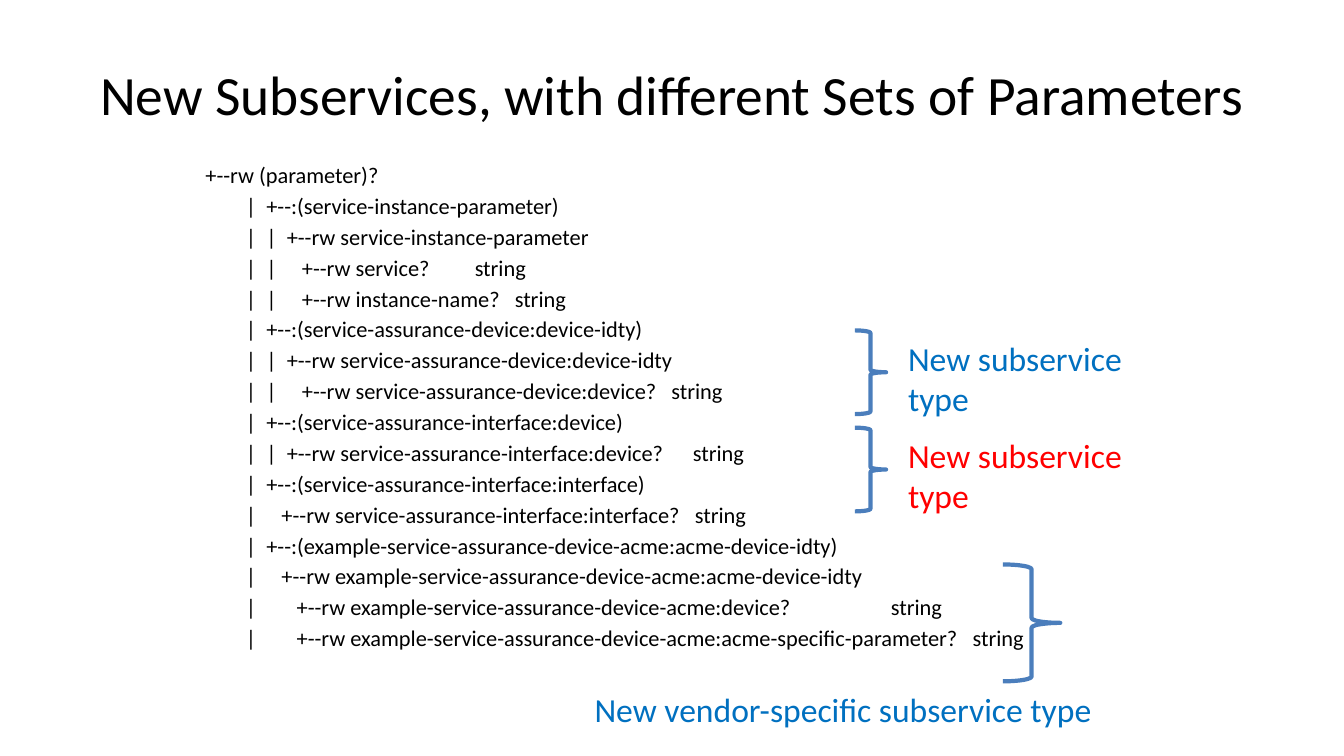
import pptx
import pptx.util
import pptx.dml.color
import pptx.enum.shapes
import pptx.enum.text
import lxml.etree
from pptx.oxml.ns import qn

Pt = pptx.util.Pt
BLACK = pptx.dml.color.RGBColor(0x00, 0x00, 0x00)
BLUE = pptx.dml.color.RGBColor(0x00, 0x70, 0xC0)
RED = pptx.dml.color.RGBColor(0xFF, 0x00, 0x00)
BRACE_BLUE = pptx.dml.color.RGBColor(0x4B, 0x7E, 0xBC)

ROOT = ()
CASE = (28.9, 43.5)
SINGLE_CHILD = (28.9, 54.3)
SINGLE_LEAF = (28.9, 65.2)
CHILD = (28.9, 43.5, 58.1)
LEAF = (28.9, 43.5, 68.9)

TREE = [
    (ROOT, "+--rw (parameter)?", None),
    (CASE, "+--:(service-instance-parameter)", None),
    (CHILD, "+--rw service-instance-parameter", None),
    (LEAF, "+--rw service?", 192.4),
    (LEAF, "+--rw instance-name?", 221),
    (CASE, "+--:(service-assurance-device:device-idty)", None),
    (CHILD, "+--rw service-assurance-device:device-idty", None),
    (LEAF, "+--rw service-assurance-device:device?", 332.8),
    (CASE, "+--:(service-assurance-interface:device)", None),
    (CHILD, "+--rw service-assurance-interface:device?", 348.2),
    (CASE, "+--:(service-assurance-interface:interface)", None),
    (SINGLE_CHILD, "+--rw service-assurance-interface:interface?", 349.6),
    (CASE, "+--:(example-service-assurance-device-acme:acme-device-idty)", None),
    (SINGLE_CHILD, "+--rw example-service-assurance-device-acme:acme-device-idty", None),
    (SINGLE_LEAF, "+--rw example-service-assurance-device-acme:device?", 489.6),
    (SINGLE_LEAF, "+--rw example-service-assurance-device-acme:acme-specific-parameter?", 548),
]


def place(part, left, top, width, height):
    part.left, part.top, part.width, part.height = map(Pt, (left, top, width, height))


def write(paragraph, text, size=24, color=BLACK, align=None, before=0):
    paragraph.alignment = align
    paragraph.space_before = Pt(before)
    run = paragraph.add_run()
    run.text = text
    run.font.name = "Calibri"
    run.font.size = Pt(size)
    run.font.color.rgb = color


def set_tab_stops(paragraph, stops):
    tab_list = lxml.etree.SubElement(paragraph._p.get_or_add_pPr(), qn("a:tabLst"))
    for stop in stops:
        lxml.etree.SubElement(tab_list, qn("a:tab"), pos=str(int(Pt(stop))), algn="l")


def add_text_frame(slide, left, top, width, height):
    frame = slide.shapes.add_textbox(*map(Pt, (left, top, width, height))).text_frame
    frame.word_wrap = True
    return frame


def add_title(slide, text):
    title = slide.shapes.title
    place(title, 48, 21.6, 864, 90)
    title.text_frame.vertical_anchor = pptx.enum.text.MSO_ANCHOR.MIDDLE
    write(title.text_frame.paragraphs[0], text, size=39.6,
          align=pptx.enum.text.PP_ALIGN.CENTER)


def add_tree(slide):
    frame = add_text_frame(slide, 139.7, 111.6, 665.3, 434.9)
    for index, (stem, node, type_stop) in enumerate(TREE):
        line = frame.add_paragraph() if index else frame.paragraphs[0]
        bars = "\t|" * (len(stem) - 1) + "\t" if stem else ""
        leaf_type = "\tstring" if type_stop else ""
        write(line, bars + node + leaf_type, size=16, before=2.85)
        stops = stem + ((type_stop,) if type_stop else ())
        if stops:
            set_tab_stops(line, stops)


def add_brace(slide, left, top, width, height):
    brace = slide.shapes.add_shape(pptx.enum.shapes.MSO_SHAPE.RIGHT_BRACE,
                                   *map(Pt, (left, top, width, height)))
    brace.shadow.inherit = False
    brace.fill.background()
    brace.line.color.rgb = BRACE_BLUE
    brace.line.width = Pt(3)


def add_caption(slide, text, left, top, width, height, color=BLUE):
    frame = add_text_frame(slide, left, top, width, height)
    write(frame.paragraphs[0], text, color=color)


def main():
    deck = pptx.Presentation()
    deck.slide_width, deck.slide_height = Pt(960), Pt(540)
    slide = deck.slides.add_slide(deck.slide_layouts[5])
    add_title(slide, "New Subservices, with different Sets of Parameters")
    add_tree(slide)
    for top, color in ((236, BLUE), (305.5, RED)):
        add_brace(slide, 610.6, top, 22.3, 59.8)
        add_caption(slide, "New subservice type", 641.5, top + 1.5, 178.6, 65.4, color)
    add_brace(slide, 716.4, 403.2, 41, 83.5)
    add_caption(slide, "New vendor-specific subservice type", 417.6, 488.2, 402.5, 36)
    deck.save("out.pptx")


if __name__ == "__main__":
    main()
